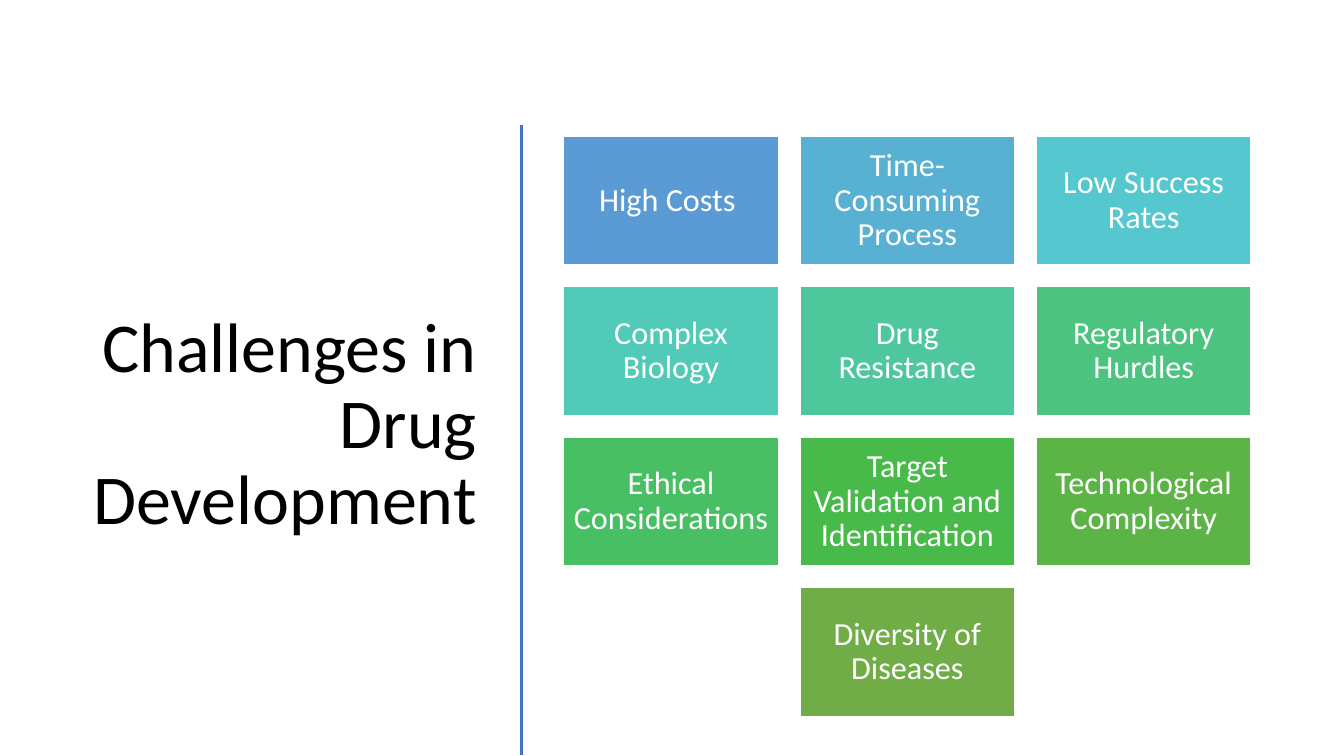
from lxml.etree import SubElement
from pptx import Presentation
from pptx.dml.color import RGBColor
from pptx.enum.shapes import MSO_CONNECTOR, MSO_SHAPE
from pptx.enum.text import MSO_ANCHOR, PP_ALIGN
from pptx.oxml.ns import qn
from pptx.util import Inches, Pt

CHALLENGES = [
    ("High Costs ", "5B9BD5"),
    ("Time-Consuming Process", "58B1D2"),
    ("Low Success Rates", "55C7CE"),
    ("Complex Biology", "52CAB8"),
    ("Drug Resistance", "4FC79C"),
    ("Regulatory Hurdles", "4CC37F"),
    ("Ethical Considerations", "49BF64"),
    ("Target Validation and Identification", "47BA49"),
    ("Technological Complexity", "5CB447"),
    ("Diversity of Diseases", "70AD47"),
]
COLUMNS = 3
GAP_SHARE = 0.1


def color(value):
    """Turn a hex string into a colour."""
    return RGBColor.from_string(value)


def apply_format(target, values):
    """Set every attribute named in a dict of format values."""
    for name, value in values.items():
        setattr(target, name, value)


def write_text(shape, text, size, text_color, alignment, inset):
    """Put one vertically centred paragraph into a shape."""
    frame = shape.text_frame
    apply_format(frame, {
        "word_wrap": True, "vertical_anchor": MSO_ANCHOR.MIDDLE,
        "margin_left": Inches(inset), "margin_right": Inches(inset),
        "margin_top": Inches(inset), "margin_bottom": Inches(inset),
    })
    paragraph = frame.paragraphs[0]
    paragraph.text = text
    apply_format(paragraph, {"alignment": alignment, "line_spacing": 0.9})
    apply_format(paragraph.font, {"name": "Calibri", "size": Pt(size)})
    paragraph.font.color.rgb = color(text_color)


def add_title(slide, left, top, width, height):
    """Add the right-aligned slide title."""
    box = slide.shapes.add_textbox(*map(Inches, (left, top, width, height)))
    write_text(box, "Challenges in Drug Development", 50, "000000", PP_ALIGN.RIGHT, 0.1)


def add_divider(slide, left, top, bottom):
    """Add the vertical line between title and tiles."""
    divider = slide.shapes.add_connector(
        MSO_CONNECTOR.STRAIGHT, *map(Inches, (left, top, left, bottom)))
    divider.line.color.rgb = color("4472C4")
    divider.line.width = Pt(2)
    SubElement(divider._element.spPr, qn("a:effectLst"))


def add_tile(slide, text, fill, left, top, width, height):
    """Add one coloured challenge tile."""
    tile = slide.shapes.add_shape(
        MSO_SHAPE.RECTANGLE, *map(Inches, (left, top, width, height)))
    tile.shadow.inherit = False
    tile.fill.solid()
    tile.fill.fore_color.rgb = color(fill)
    tile.line.color.rgb = color("FFFFFF")
    tile.line.width = Pt(1)
    write_text(tile, text, 23, "FFFFFF", PP_ALIGN.CENTER, 0.09)


def add_tiles(slide, left, top, width, height):
    """Lay the tiles out in rows, centring an incomplete last row."""
    rows = -(-len(CHALLENGES) // COLUMNS)
    tile_width = width / (COLUMNS + (COLUMNS - 1) * GAP_SHARE)
    gap = tile_width * GAP_SHARE
    tile_height = (height - (rows - 1) * gap) / rows
    for index, (text, fill) in enumerate(CHALLENGES):
        row, column = divmod(index, COLUMNS)
        in_row = min(COLUMNS, len(CHALLENGES) - row * COLUMNS)
        column += (COLUMNS - in_row) / 2
        add_tile(slide, text, fill, left + column * (tile_width + gap),
                 top + row * (tile_height + gap), tile_width, tile_height)


def main():
    """Build and save the presentation."""
    presentation = Presentation()
    apply_format(presentation, {"slide_width": Inches(13.33), "slide_height": Inches(7.5)})
    slide = presentation.slides.add_slide(presentation.slide_layouts[6])
    add_title(slide, 0.52, 1.17, 4.31, 6.11)
    add_divider(slide, 5.17, 1.24, 7.49)
    add_tiles(slide, 5.59, 1.35, 6.82, 5.76)
    presentation.save("out.pptx")


if __name__ == "__main__":
    main()
